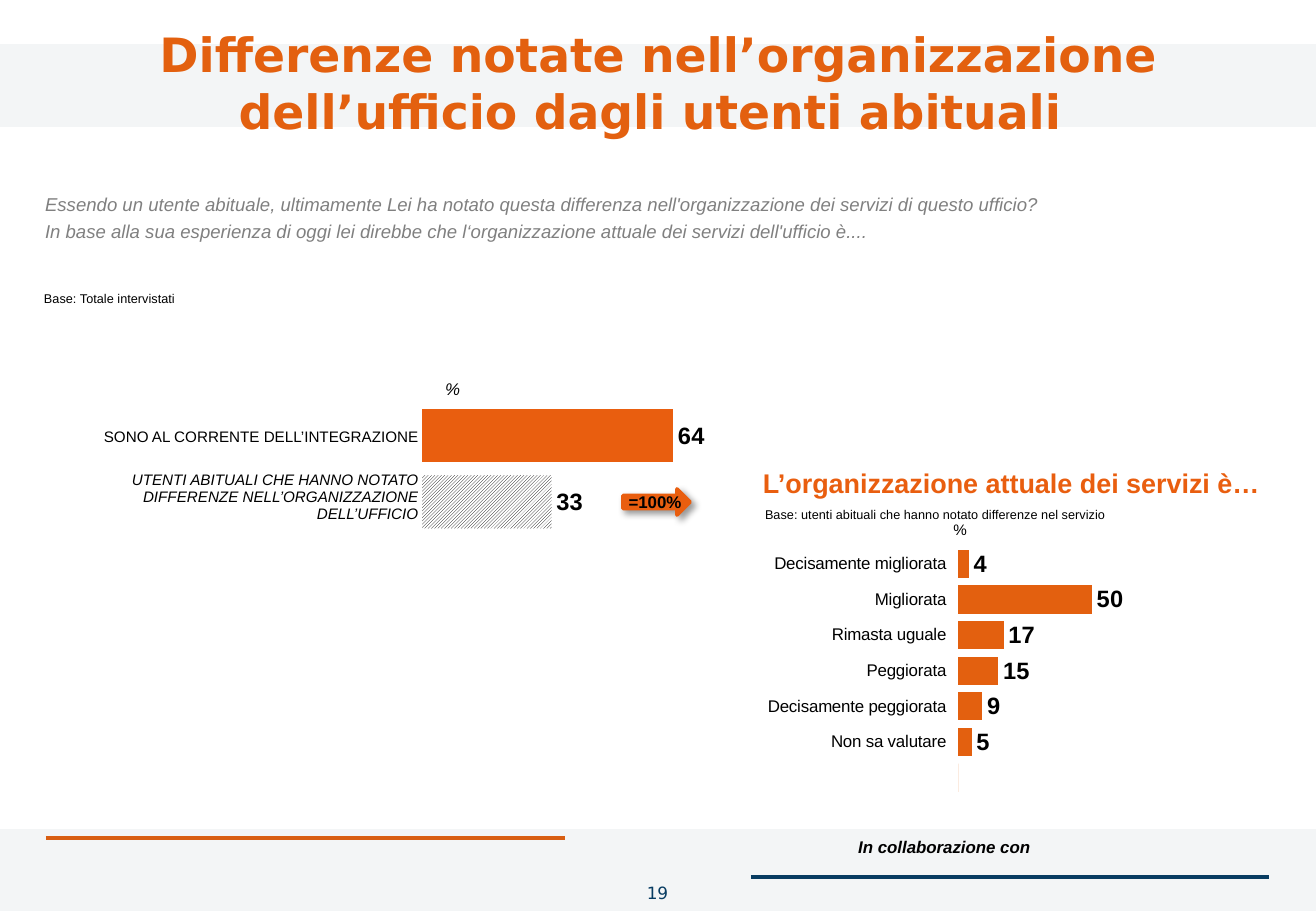
from pptx import Presentation
from pptx.chart.data import CategoryChartData
from pptx.dml.color import RGBColor
from pptx.enum.chart import XL_CHART_TYPE, XL_LABEL_POSITION, XL_TICK_MARK
from pptx.enum.dml import MSO_PATTERN
from pptx.enum.shapes import MSO_CONNECTOR, MSO_SHAPE
from pptx.enum.text import MSO_ANCHOR, MSO_AUTO_SIZE, PP_ALIGN
from pptx.oxml import parse_xml
from pptx.oxml.ns import nsdecls, qn
from pptx.util import Pt

PX = 914400 / 121.5
BAR = XL_CHART_TYPE.BAR_CLUSTERED
OUT_END = XL_LABEL_POSITION.OUTSIDE_END
TICK_OUT = XL_TICK_MARK.OUTSIDE
HATCH = MSO_PATTERN.DARK_UPWARD_DIAGONAL
STRAIGHT = MSO_CONNECTOR.STRAIGHT
RECT, ARROW = MSO_SHAPE.RECTANGLE, MSO_SHAPE.RIGHT_ARROW
TOP, MID = MSO_ANCHOR.TOP, MSO_ANCHOR.MIDDLE
LEFT, CENTER = PP_ALIGN.LEFT, PP_ALIGN.CENTER
RIGHT, JUST = PP_ALIGN.RIGHT, PP_ALIGN.JUSTIFY
FIXED = MSO_AUTO_SIZE.NONE

ORANGE, FLAME, NAVY, SLATE = "E3600F", "E95E0F", "073C62", "1E3D5C"
GRAY, BLACK, WHITE = "808080", "000000", "FFFFFF"
SANS, DEJA = "Arial", "DejaVu Sans"


def px(n):
    return round(n * PX)


def color(code):
    return RGBColor.from_string(code)


def style(font, size, tint=BLACK, face=SANS, bold=False, italic=False):
    font.size, font.name = Pt(size), face
    font.bold, font.italic = bold, italic
    font.color.rgb = color(tint)


def write(frame, text, align=LEFT, line=None, before=0, **look):
    for i, words in enumerate(text.split("\n")):
        para = frame.paragraphs[0] if i == 0 else frame.add_paragraph()
        para.text = words
        para.alignment = align
        if line:
            para.line_spacing = line
        if i and before:
            para.space_before = Pt(before)
        for run in para.runs:
            style(run.font, **look)


class Page:
    def __init__(self, wide, high):
        self.deck = Presentation()
        self.deck.slide_width, self.deck.slide_height = px(wide), px(high)
        self.slide = self.deck.slides.add_slide(self.deck.slide_layouts[5])
        self.shapes = self.slide.shapes

    def fit(self, frame, inset, anchor):
        frame.word_wrap, frame.auto_size = True, FIXED
        frame.vertical_anchor = anchor
        frame.margin_left = frame.margin_right = px(inset[0])
        frame.margin_top = frame.margin_bottom = px(inset[1])

    def title(self, box, text, **look):
        head = self.shapes.title
        head.left, head.top, head.width, head.height = map(px, box)
        self.fit(head.text_frame, (12, 6), MID)
        write(head.text_frame, text, **look)
        self.shapes._spTree.append(head._element)

    def text(self, box, text, inset=(10, 5), anchor=TOP, **look):
        frame = self.shapes.add_textbox(*map(px, box)).text_frame
        self.fit(frame, inset, anchor)
        write(frame, text, **look)

    def rule(self, left, right, top, tint):
        line = self.shapes.add_connector(STRAIGHT, px(left), px(top), px(right), px(top))
        line.line.color.rgb, line.line.width = color(tint), Pt(2)
        line._element.spPr.append(parse_xml(f'<a:effectLst {nsdecls("a")}/>'))

    def shape(self, kind, box, tint, alpha=None, edge=None, shade=False):
        item = self.shapes.add_shape(kind, *map(px, box))
        item.shadow.inherit = False
        item.fill.solid()
        item.fill.fore_color.rgb = color(tint)
        props = item._element.spPr
        if alpha:
            props.find(f'{qn("a:solidFill")}/{qn("a:srgbClr")}').append(
                parse_xml(f'<a:alpha {nsdecls("a")} val="{alpha * 1000}"/>'))
        if edge:
            item.line.color.rgb, item.line.width = color(tint), Pt(edge)
        else:
            item.line.fill.background()
        if shade:
            props.find(qn("a:effectLst")).append(parse_xml(
                f'<a:outerShdw {nsdecls("a")} blurRad="50800" dist="38100" dir="2700000">'
                '<a:srgbClr val="000000"><a:alpha val="40000"/></a:srgbClr></a:outerShdw>'))

    def bars(self, box, cats, vals, tint, gap, plot, form, names=False):
        data = CategoryChartData()
        data.categories = cats
        data.add_series("Series 1", vals)
        chart = self.shapes.add_chart(BAR, *map(px, box), data).chart
        chart.has_legend = chart.has_title = False
        style(chart.font, 18, face=DEJA)
        axis, scale = chart.category_axis, chart.value_axis
        axis.reverse_order = True
        axis.visible = names
        if names:
            axis.major_tick_mark = TICK_OUT
            axis.format.line.fill.background()
            style(axis.tick_labels.font, 10)
        scale.minimum_scale, scale.maximum_scale = 0, 100
        scale.has_major_gridlines = scale.visible = False
        body = chart.plots[0]
        body.gap_width, body.vary_by_categories = gap, False
        row = body.series[0]
        row.format.fill.solid()
        row.format.fill.fore_color.rgb = color(tint)
        tags = row.data_labels
        tags.show_value, tags.position = True, OUT_END
        tags.number_format, tags.number_format_is_linked = form, False
        style(tags.font, 14, bold=True)
        area = chart._chartSpace.chart.plotArea
        for old in area.findall(qn("c:layout")):
            area.remove(old)
        spots = "".join(f'<c:{key} val="{val}"/>' for key, val in zip("xywh", plot))
        area.insert(0, parse_xml(
            f'<c:layout {nsdecls("c")}><c:manualLayout><c:layoutTarget val="inner"/>'
            f'<c:xMode val="edge"/><c:yMode val="edge"/>{spots}</c:manualLayout></c:layout>'))
        return row

    def hatch(self, point):
        fill = point.format.fill
        fill.patterned()
        fill.pattern = HATCH
        fill.fore_color.rgb, fill.back_color.rgb = color(BLACK), color(WHITE)

    def table(self, box, rows):
        grid = self.shapes.add_table(len(rows), 1, *map(px, box)).table
        grid.first_row = grid.horz_banding = False
        for i, (high, text, italic) in enumerate(rows):
            grid.rows[i].height = px(high)
            cell = grid.cell(i, 0)
            cell.fill.background()
            cell.vertical_anchor = MID
            cell.margin_left = cell.margin_right = cell.margin_top = px(1)
            cell.margin_bottom = 0
            write(cell.text_frame, text, align=RIGHT, size=9, italic=italic)


def main():
    page = Page(1316, 911)
    page.rule(46, 565, 838, ORANGE)
    page.rule(751, 1269, 877, NAVY)
    for top in (829, 44):
        page.shape(RECT, (0, top, 1316, 83), SLATE, alpha=5)
    page.text((796, 832, 244, 32), "In collaborazione con", align=RIGHT,
              size=10, bold=True, italic=True)
    page.title((27, 6, 1262, 152),
               "Differenze notate nell’organizzazione\vdell’ufficio dagli utenti abituali ",
               align=CENTER, size=28, tint=ORANGE, face=DEJA, bold=True)
    page.text((600, 877, 115, 34), "19", inset=(12, 6), align=CENTER,
              size=10, tint=NAVY, face=DEJA)
    page.text((429, 378, 47, 21), "%", inset=(0, 0), anchor=MID, align=CENTER,
              size=10, italic=True)
    page.text((34, 278, 294, 24), "Base: Totale intervistati", align=JUST,
              line=1.5, size=7.5)
    page.bars((706, 515, 563, 294),
              ["Decisamente migliorata", "Migliorata", "Rimasta uguale",
               "Peggiorata", "Decisamente peggiorata", "Non sa valutare", ""],
              [4, 50, 17, 15, 9, 5, 0], ORANGE, 27, (0.448, 0.106, 0.475, 0.849),
              "#,##0;;", names=True)
    page.text((753, 462, 526, 41), "L’organizzazione attuale dei servizi è…",
              size=16, tint=FLAME, bold=True)
    page.text((935, 515, 50, 28), "%", align=CENTER, size=9)
    page.shape(ARROW, (623, 489, 67, 26), FLAME, edge=2.25, shade=True)
    page.text((602, 486, 106, 30), "=100%", inset=(12, 6), align=CENTER,
              size=10, bold=True)
    page.text((755, 494, 405, 24),
              "Base: utenti abituali che hanno notato differenze nel servizio",
              align=JUST, line=1.5, size=7.5)
    page.text((34, 188, 1046, 53),
              "Essendo un utente abituale, ultimamente Lei ha notato questa differenza "
              "nell'organizzazione dei servizi di questo ufficio?\n"
              "In base alla sua esperienza di oggi lei direbbe che l‘organizzazione "
              "attuale dei servizi dell'ufficio è....",
              inset=(11, 5), align=JUST, before=2.5, size=11, tint=GRAY, italic=True)
    known = page.bars((260, 401, 791, 146), ["1", "2"], [64, 33], FLAME, 24,
                      (0.205, 0.013, 0.496, 0.905), "0")
    page.hatch(known.points[1])
    page.table((97, 411, 322, 119), [
        (52, "SONO AL CORRENTE DELL’INTEGRAZIONE", False),
        (67, "UTENTI ABITUALI CHE HANNO NOTATO DIFFERENZE "
             "NELL’ORGANIZZAZIONE DELL’UFFICIO", True)])
    page.deck.save("out.pptx")


if __name__ == "__main__":
    main()
